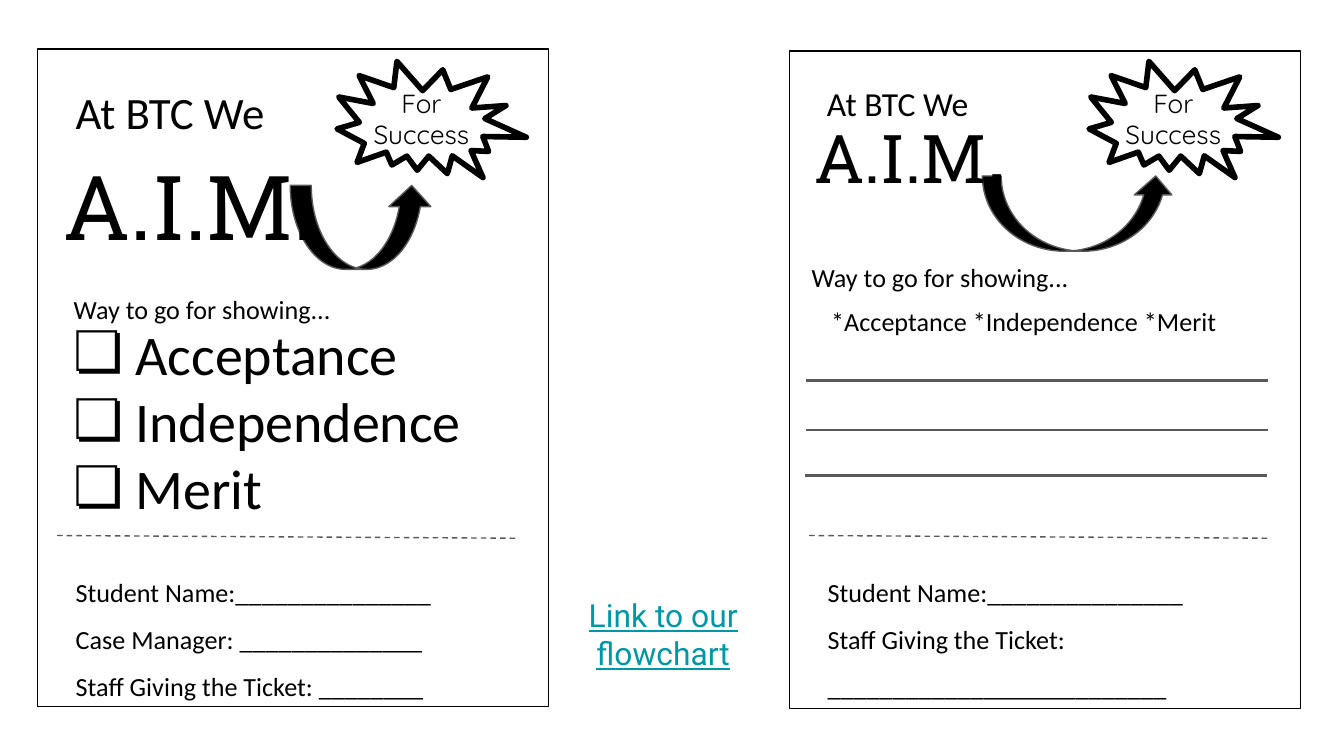
"""Build a slide with two printable A.I.M. award tickets and a flowchart label."""
from lxml import etree
from pptx import Presentation
from pptx.dml.color import RGBColor
from pptx.enum.dml import MSO_LINE
from pptx.enum.shapes import MSO_CONNECTOR, MSO_SHAPE
from pptx.enum.text import PP_ALIGN
from pptx.oxml.ns import qn
from pptx.util import Pt

PX = 4572
BLACK = RGBColor(0x00, 0x00, 0x00)
GREY = RGBColor(0x59, 0x59, 0x59)
TEAL = RGBColor(0x00, 0x97, 0xA7)
LEFT, MID = PP_ALIGN.LEFT, PP_ALIGN.CENTER
RECT, STAR, ARROW = MSO_SHAPE.RECTANGLE, MSO_SHAPE.EXPLOSION2, MSO_SHAPE.CURVED_UP_ARROW
STRAIGHT, DASH = MSO_CONNECTOR.STRAIGHT, MSO_LINE.DASH

deck = Presentation()
deck.slide_width, deck.slide_height = 2000 * PX, 1125 * PX
slide = deck.slides.add_slide(deck.slide_layouts[6])


def write(shapes, box, text, size, font="Calibri", align=LEFT, color=BLACK, space=None):
    frame = shapes.add_textbox(*[n * PX for n in box]).text_frame
    frame.word_wrap = True
    frame.margin_left = frame.margin_right = 20 * PX
    frame.margin_top = frame.margin_bottom = 20 * PX
    frame.text = text
    for para in frame.paragraphs:
        para.alignment = align
        para.line_spacing = space
        for run in para.runs:
            run.font.size, run.font.name = Pt(size), font
            run.font.color.rgb = color
    return frame


def rule(shapes, ends, width, dash=None):
    line = shapes.add_connector(STRAIGHT, *[n * PX for n in ends])
    line.line.color.rgb, line.line.width = GREY, Pt(width)
    line.line.dash_style = dash
    etree.SubElement(line._element.spPr, qn("a:effectLst"))


tickets = [
    dict(x=56, top=73, arrow=(432, 276, 212, 125), aim=(75, 204, 480, 186),
         head=(93, 106, 394, 112), go=(90, 416, 554, 60), sizes=(48, 24),
         form="Student Name:_______________\nCase Manager: ______________\n"
              "Staff Giving the Ticket: ________"),
    dict(x=1175, top=76, arrow=(1462, 262, 286, 112), aim=(1192, 120, 480, 166),
         head=(1211, 87, 394, 112), go=(1188, 369, 594, 112), sizes=(36, 18),
         form="Student Name:_______________\nStaff Giving the Ticket:\n"
              "__________________________"),
]
groups, titles, heads = [], [], []
for card in tickets:
    group = slide.shapes.add_group_shape().shapes
    x = card["x"]
    for kind, box, fill, color, width in [
        (RECT, (x, card["top"], 760, 978), None, BLACK, 0.75),
        (ARROW, card["arrow"], BLACK, GREY, 0.75),
        (STAR, (x + 444, 86, 280, 194), None, BLACK, 3),
    ]:
        shape = group.add_shape(kind, *[n * PX for n in box])
        shape.shadow.inherit = False
        shape.line.color.rgb, shape.line.width = color, Pt(width)
        if fill is None:
            shape.fill.background()
        else:
            shape.fill.solid()
            shape.fill.fore_color.rgb = fill
        if kind == ARROW:
            shape.adjustments[2] = 0.252
        if kind == STAR:
            shape.rotation = 23.4
    big, small = card["sizes"]
    title = "A.I.M." if big == 48 else "A.I.M"
    titles.append(write(group, card["aim"], title, big, "Roboto Slab"))
    heads.append(write(group, card["head"], "At BTC We", small))
    write(group, (x + 472, 110, 198, 112), "For Success", 14, "Quicksand", MID)
    write(group, card["go"], "Way to go for showing...", 14)
    write(group, (x + 37, 815, 688, 206), card["form"], 14, space=1.5)
    rule(group, (x + 29, 797, x + 711, 801), 0.75, DASH)
    groups.append(group)

for frame, text, font, size in [
    (titles[1], ".", "Roboto Slab", 48),
    (heads[1], " ", "Arial", 24),
]:
    run = frame.paragraphs[0].add_run()
    run.text = text
    run.font.name, run.font.size = font, Pt(size)
    run.font.color.rgb = BLACK

checks = write(groups[0], (82, 455, 688, 346), "Acceptance\nIndependence\nMerit", 30)
for para in checks.paragraphs:
    props = para._p.get_or_add_pPr()
    props.set("marL", str(100 * PX))
    props.set("indent", str(-92 * PX))
    tint = etree.SubElement(props, qn("a:buClr"))
    etree.SubElement(tint, qn("a:srgbClr"), val=str(BLACK))
    etree.SubElement(props, qn("a:buFont"), typeface="Calibri")
    etree.SubElement(props, qn("a:buChar"), char="❏")

write(groups[1], (1180, 434, 688, 88), "*Acceptance *Independence *Merit", 14, align=MID)
for left, y in [(1200, 566), (1200, 640), (1198, 708)]:
    rule(groups[1], (left, y, left + 687, y), 1.5)

label = write(slide.shapes, (843, 867, 288, 184), "Link to our flowchart", 17, "Roboto", MID, TEAL)
label.paragraphs[0].runs[0].font.underline = True

deck.save("out.pptx")
